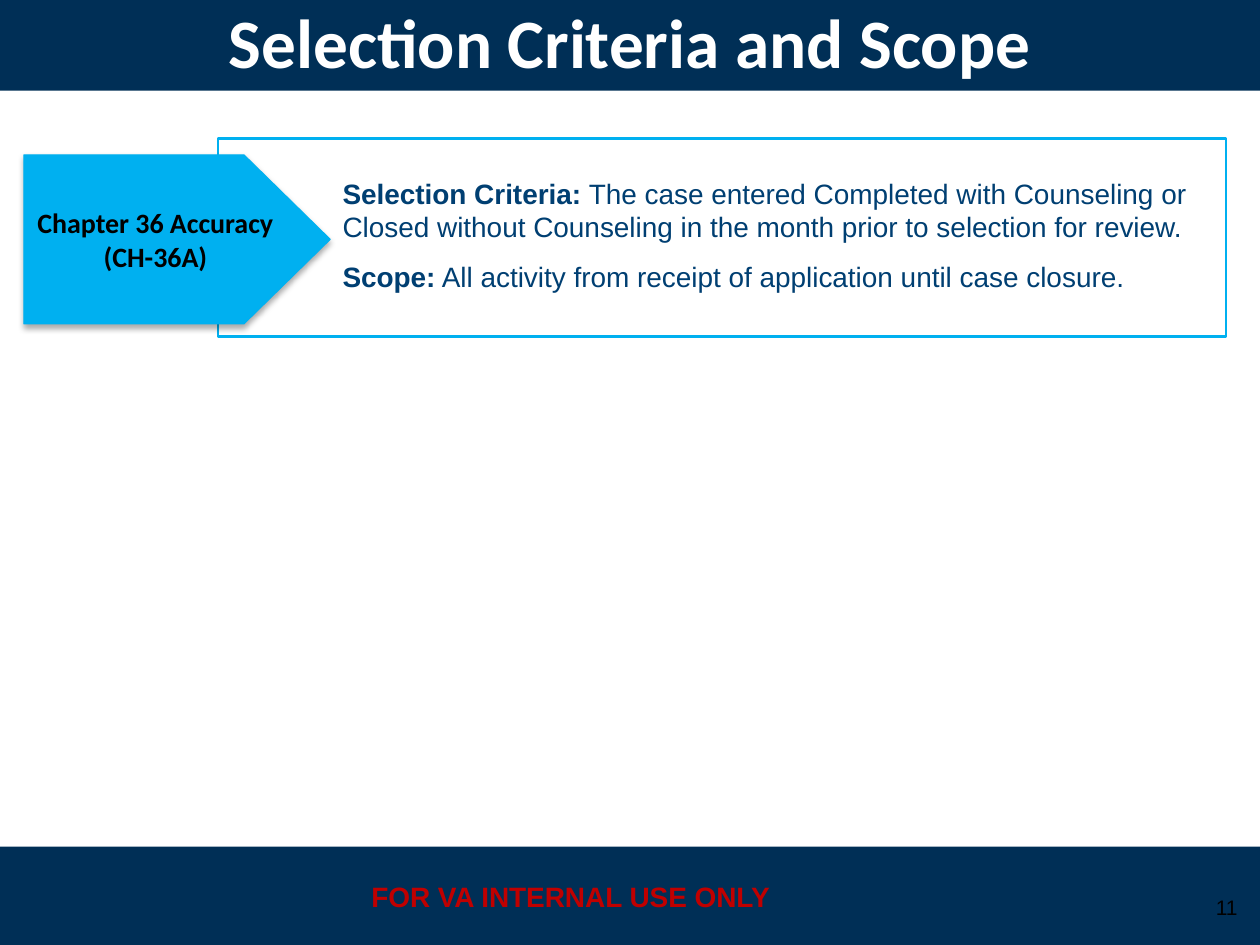
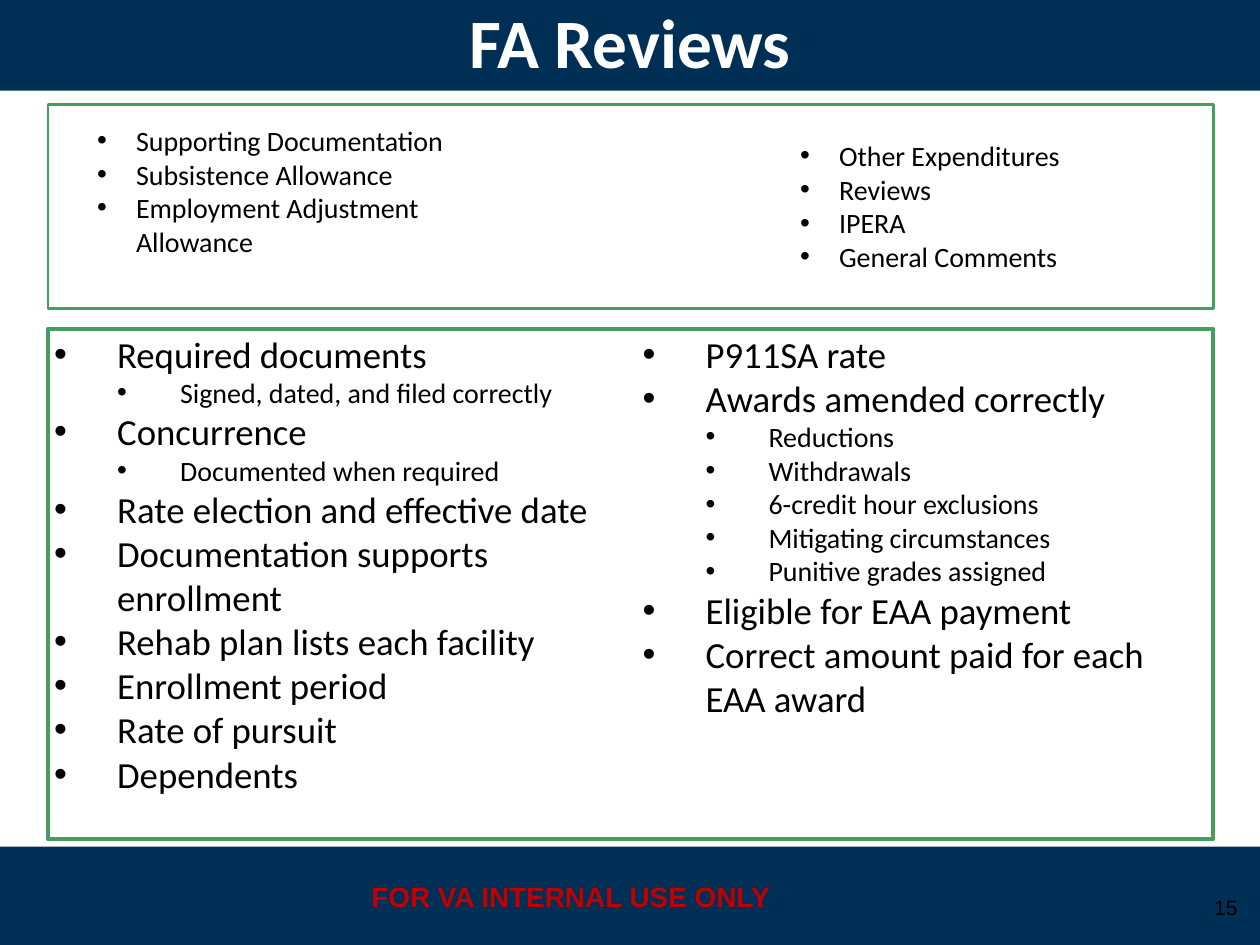
from dataclasses import dataclass

import pptx
import pptx.dml.color
import pptx.enum.shapes
import pptx.enum.text
import pptx.oxml
import pptx.oxml.ns
import pptx.presentation
import pptx.shapes.autoshape
import pptx.slide
import pptx.text.text
import pptx.util

Inches = pptx.util.Inches
ALIGN = pptx.enum.text.PP_ALIGN
ANCHOR = pptx.enum.text.MSO_ANCHOR
SHAPE = pptx.enum.shapes.MSO_SHAPE

NAVY, TEXT_BLUE, SKY = "002F56", "003F72", "00B0F0"
GREEN_TOP, GREEN_BOTTOM = "42A05B", "459E5D"
RED, WHITE, BLACK = "C00000", "FFFFFF", "000000"
TITLE_ONLY, COMPARISON = 5, 4


@dataclass(frozen=True)
class Box:
    left: float
    top: float
    width: float
    height: float

    def lengths(self) -> tuple[int, int, int, int]:
        return (Inches(self.left), Inches(self.top),
                Inches(self.width), Inches(self.height))


@dataclass(frozen=True)
class TextStyle:
    size: float
    color: str
    font: str = "Calibri"
    bold: bool = False


@dataclass(frozen=True)
class BulletList:
    """Items that begin with a tab stand one level deeper."""
    box: Box
    items: list[str]
    indent: float
    sizes: tuple[int, ...]


TOP_BAND = Box(0, -0.08, 10, 0.8)
BOTTOM_BAND = Box(0, 6.72, 10, 0.8)
TITLE_STYLE = TextStyle(39.6, WHITE, bold=True)
FOOTER_STYLE = TextStyle(16, RED, "Arial", True)
NUMBER_STYLE = TextStyle(12, BLACK, "Arial")
LABEL_STYLE = TextStyle(16, BLACK, bold=True)
CRITERIA_STYLE = TextStyle(16, TEXT_BLUE, "Arial")

CRITERIA = [
    ("Selection Criteria:", " The case entered Completed with Counseling or Closed "
     "without Counseling in the month prior to selection for review."),
    ("Scope:", " All activity from receipt of application until case closure."),
]

REVIEW_LISTS = [
    BulletList(Box(0.67, 0.93, 2.99, 1.18), [
        "Supporting Documentation", "Subsistence Allowance",
        "Employment Adjustment Allowance"], 0.31, (16,)),
    BulletList(Box(6.25, 1.05, 2.99, 1.18), [
        "Other Expenditures", "Reviews", "IPERA", "General Comments"], 0.31, (16,)),
    BulletList(Box(0.33, 2.58, 4.67, 3.82), [
        "Required documents", "\tSigned, dated, and filed correctly",
        "Concurrence", "\tDocumented when required",
        "Rate election and effective date", "Documentation supports enrollment",
        "Rehab plan lists each facility", "Enrollment period",
        "Rate of pursuit", "Dependents"], 0.5, (21, 16)),
    BulletList(Box(5, 2.58, 4.67, 3.3), [
        "P911SA rate", "Awards amended correctly", "\tReductions",
        "\tWithdrawals", "\t6-credit hour exclusions",
        "\tMitigating circumstances", "\tPunitive grades assigned",
        "Eligible for EAA payment", "Correct amount paid for each EAA award"],
        0.5, (21, 16)),
]


def rgb(color: str) -> pptx.dml.color.RGBColor:
    return pptx.dml.color.RGBColor.from_string(color)


def format_run(run: pptx.text.text._Run, style: TextStyle) -> None:
    run.font.name = style.font
    run.font.size = pptx.util.Pt(style.size)
    run.font.bold = style.bold
    run.font.color.rgb = rgb(style.color)


def write(frame: pptx.text.text.TextFrame, text: str, style: TextStyle,
          align: ALIGN, anchor: ANCHOR = ANCHOR.MIDDLE) -> None:
    frame.text = text
    frame.word_wrap = True
    frame.auto_size = pptx.enum.text.MSO_AUTO_SIZE.NONE
    frame.vertical_anchor = anchor
    for paragraph in frame.paragraphs:
        paragraph.alignment = align
        for run in paragraph.runs:
            format_run(run, style)


def add_panel(slide: pptx.slide.Slide, box: Box, fill: str | None = None,
              line: str | None = None, line_width: float = 0.75,
              kind: SHAPE = SHAPE.RECTANGLE) -> pptx.shapes.autoshape.Shape:
    shape = slide.shapes.add_shape(kind, *box.lengths())
    shape.shadow.inherit = False
    if fill:
        shape.fill.solid()
        shape.fill.fore_color.rgb = rgb(fill)
    else:
        shape.fill.background()
    if line:
        shape.line.color.rgb = rgb(line)
        shape.line.width = pptx.util.Pt(line_width)
    else:
        shape.line.fill.background()
    return shape


def add_drop_shadow(shape: pptx.shapes.autoshape.Shape) -> None:
    effects = shape.element.spPr.find(pptx.oxml.ns.qn("a:effectLst"))
    effects.append(pptx.oxml.parse_xml(
        f'<a:outerShdw {pptx.oxml.ns.nsdecls("a")} blurRad="{pptx.util.Pt(3.5)}" '
        f'dist="{pptx.util.Pt(2.2)}" dir="5400000" rotWithShape="0">'
        f'<a:srgbClr val="{BLACK}"><a:alpha val="32000"/></a:srgbClr></a:outerShdw>'))


def place(shape: pptx.shapes.autoshape.Shape, box: Box) -> None:
    shape.left, shape.top, shape.width, shape.height = box.lengths()


def add_slide(presentation: pptx.presentation.Presentation, layout: int,
              title: str, number: int) -> pptx.slide.Slide:
    slide = presentation.slides.add_slide(presentation.slide_layouts[layout])
    place(slide.shapes.title, TOP_BAND)
    write(slide.shapes.title.text_frame, title, TITLE_STYLE, ALIGN.CENTER)
    number_box = slide.shapes.add_textbox(*Box(9.5, 7, 0.42, 0.4).lengths())
    write(number_box.text_frame, str(number), NUMBER_STYLE, ALIGN.RIGHT)
    return slide


def add_bands_to_master(presentation: pptx.presentation.Presentation,
                        slide: pptx.slide.Slide) -> None:
    """Draw the bands and footer on a slide, then move them to the master."""
    bands = [add_panel(slide, box, NAVY) for box in (BOTTOM_BAND, TOP_BAND)]
    footer = slide.shapes.add_textbox(*Box(2.56, 6.93, 3.94, 0.37).lengths())
    write(footer.text_frame, "FOR VA INTERNAL USE ONLY", FOOTER_STYLE,
          ALIGN.CENTER, ANCHOR.TOP)
    for shape in (*bands, footer):
        presentation.slide_master.shapes.element.append(shape.element)


def add_bullet(paragraph: pptx.text.text._Paragraph, indent: float, level: int) -> None:
    properties = paragraph._p.get_or_add_pPr()
    properties.set("marL", str(Inches(indent * (level + 1))))
    properties.set("indent", str(-Inches(indent)))
    namespace = pptx.oxml.ns.nsdecls("a")
    for tag in ('buFont {} typeface="Arial"', 'buChar {} char="•"'):
        properties.append(pptx.oxml.parse_xml(f"<a:{tag.format(namespace)}/>"))


def fill_list(placeholder: pptx.shapes.autoshape.Shape, bullets: BulletList) -> None:
    place(placeholder, bullets.box)
    frame = placeholder.text_frame
    write(frame, "\n".join(item.strip() for item in bullets.items),
          TextStyle(bullets.sizes[0], BLACK), ALIGN.LEFT, ANCHOR.TOP)
    for paragraph, item in zip(frame.paragraphs, bullets.items):
        level = int(item.startswith("\t"))
        paragraph.level = level
        paragraph.space_before = pptx.util.Pt(0)
        add_bullet(paragraph, bullets.indent, level)
        paragraph.runs[0].font.size = pptx.util.Pt(bullets.sizes[level])


def add_criteria(slide: pptx.slide.Slide) -> None:
    add_panel(slide, Box(1.73, 1.1, 8, 1.57), line=SKY, line_width=1.5)
    text_box = slide.shapes.add_textbox(*Box(2.62, 1.35, 7.08, 1.06).lengths())
    frame = text_box.text_frame
    write(frame, "\n".join(heading for heading, _ in CRITERIA),
          TextStyle(16, TEXT_BLUE, "Arial", True), ALIGN.LEFT, ANCHOR.TOP)
    for paragraph, (_, detail) in zip(frame.paragraphs, CRITERIA):
        run = paragraph.add_run()
        run.text = detail
        format_run(run, CRITERIA_STYLE)
    frame.paragraphs[1].space_before = pptx.util.Pt(9)

    arrow = add_panel(slide, Box(0.19, 1.23, 2.43, 1.34), SKY, SKY, kind=SHAPE.PENTAGON)
    arrow.adjustments[0] = 0.51
    add_drop_shadow(arrow)
    arrow.text_frame.margin_left = arrow.text_frame.margin_right = Inches(0.05)
    write(arrow.text_frame, "Chapter 36 Accuracy\n(CH-36A)", LABEL_STYLE, ALIGN.CENTER)


def main() -> None:
    presentation = pptx.Presentation()
    presentation.slide_width, presentation.slide_height = Inches(10), Inches(7.5)

    scope = add_slide(presentation, TITLE_ONLY, "Selection Criteria and Scope", 11)
    add_bands_to_master(presentation, scope)
    add_criteria(scope)

    reviews = add_slide(presentation, COMPARISON, "FA Reviews", 15)
    add_panel(reviews, Box(0.38, 0.83, 9.25, 1.62), line=GREEN_TOP, line_width=1.5)
    add_panel(reviews, Box(0.38, 2.61, 9.25, 4.05), line=GREEN_BOTTOM, line_width=2.25)
    bodies = list(reviews.placeholders)[1:]
    for placeholder, bullets in zip(bodies, REVIEW_LISTS):
        fill_list(placeholder, bullets)

    presentation.save("out.pptx")


if __name__ == "__main__":
    main()
